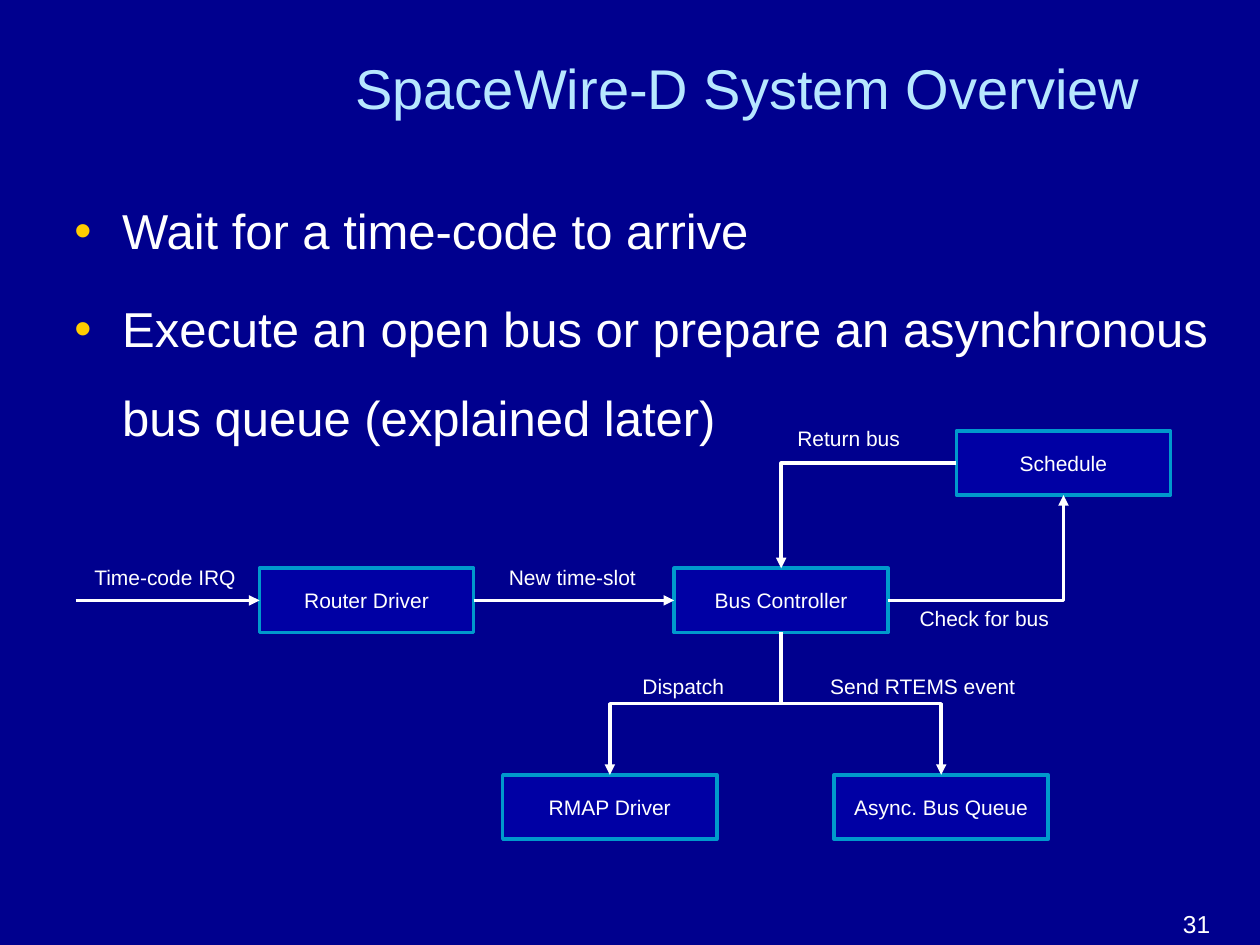
"""Build the SpaceWire-D system overview slide."""
from lxml import etree
from pptx import Presentation
from pptx.dml.color import RGBColor
from pptx.enum.shapes import MSO_CONNECTOR, MSO_SHAPE
from pptx.enum.text import MSO_ANCHOR, MSO_AUTO_SIZE, PP_ALIGN
from pptx.oxml.ns import qn
from pptx.util import Inches, Pt

STRAIGHT, ELBOW = MSO_CONNECTOR.STRAIGHT, MSO_CONNECTOR.ELBOW
RECTANGLE = MSO_SHAPE.RECTANGLE
TOP, MIDDLE, BOTTOM = MSO_ANCHOR.TOP, MSO_ANCHOR.MIDDLE, MSO_ANCHOR.BOTTOM
LEFT, CENTER = PP_ALIGN.LEFT, PP_ALIGN.CENTER
NO_FIT, GROW = MSO_AUTO_SIZE.NONE, MSO_AUTO_SIZE.SHAPE_TO_FIT_TEXT

THEME = {
    "font": "Arial",
    "background": "00008E", "title": "B7E7FF", "text": "FFFFFF",
    "bullet": "FFCC00", "box": "0000A4", "border": "0099CC", "arrow": "FFFFFF",
    "title_size": 32, "body_size": 28, "number_size": 14, "label_size": 12,
    "line_width": 2,
}

TITLE = "SpaceWire-D System Overview"
BULLETS = [
    "Wait for a time-code to arrive",
    "Execute an open bus or prepare an asynchronous bus queue (explained later)",
]
SLIDE_NUMBER = "31"

BOX_WIDTH, BOX_HEIGHT = 1.7, 0.51
BOXES = {
    "Router Driver": (2.06, 4.51),
    "Bus Controller": (5.35, 4.51),
    "RMAP Driver": (3.99, 6.15),
    "Async. Bus Queue": (6.62, 6.15),
    "Schedule": (7.59, 3.42),
}
LABEL_HEIGHT = 0.3
LABELS = [
    ("Time-code IRQ", 0.65, 4.43, 1.34),
    ("New time-slot", 3.94, 4.43, 1.22),
    ("Send RTEMS event", 6.49, 5.3, 1.68),
    ("Dispatch", 5, 5.3, 0.85),
    ("Check for bus", 7.2, 4.76, 1.24),
    ("Return bus", 6.23, 3.33, 1.02),
]
SITE_TOP, SITE_LEFT, SITE_BOTTOM, SITE_RIGHT = range(4)
INPUT_START = 0.6
ARROWS = [
    ("straight", "Router Driver", SITE_RIGHT, "Bus Controller", SITE_LEFT),
    ("fork", "Bus Controller", SITE_BOTTOM, "RMAP Driver", SITE_TOP),
    ("fork", "Bus Controller", SITE_BOTTOM, "Async. Bus Queue", SITE_TOP),
    ("corner", "Bus Controller", SITE_RIGHT, "Schedule", SITE_BOTTOM),
    ("corner", "Schedule", SITE_LEFT, "Bus Controller", SITE_TOP),
]


def color(name):
    return RGBColor.from_string(THEME[name])


def place(shape, left, top, width, height):
    shape.left, shape.top = Inches(left), Inches(top)
    shape.width, shape.height = Inches(width), Inches(height)


def add_bullet(paragraph):
    properties = paragraph._p.get_or_add_pPr()
    indent = Inches(0.38)
    properties.set("marL", str(indent))
    properties.set("indent", str(-indent))
    bullet_color = etree.SubElement(properties, qn("a:buClr"))
    etree.SubElement(bullet_color, qn("a:srgbClr")).set("val", THEME["bullet"])
    etree.SubElement(properties, qn("a:buChar")).set("char", "•")


def write_text(shape, lines, size="label_size", fill="text", align=LEFT, anchor=TOP,
               wrap=True, fit=NO_FIT, side_margin=0.1, bulleted=False):
    frame = shape.text_frame
    frame.text = "\n".join(lines)
    frame.word_wrap, frame.auto_size, frame.vertical_anchor = wrap, fit, anchor
    frame.margin_left = frame.margin_right = Inches(side_margin)
    for index, paragraph in enumerate(frame.paragraphs):
        if bulleted:
            add_bullet(paragraph)
            paragraph.line_spacing = 1.5
        paragraph.space_before = Pt(0.2 * THEME[size] if index else 0)
        paragraph.alignment = align
        paragraph.font.name = THEME["font"]
        paragraph.font.size = Pt(THEME[size])
        paragraph.font.color.rgb = color(fill)


def add_box(slide, text, left, top):
    box = slide.shapes.add_shape(RECTANGLE, Inches(left), Inches(top),
                                 Inches(BOX_WIDTH), Inches(BOX_HEIGHT))
    box.shadow.inherit = False
    box.fill.solid()
    box.fill.fore_color.rgb = color("box")
    box.line.color.rgb = color("border")
    box.line.width = Pt(THEME["line_width"])
    write_text(box, [text], align=CENTER, anchor=MIDDLE, side_margin=0)
    return box


def add_text_box(slide, text, left, top, width, height, **text_format):
    text_box = slide.shapes.add_textbox(0, 0, 0, 0)
    write_text(text_box, [text], **text_format)
    place(text_box, left, top, width, height)


def site_point(name, site):
    left, top = BOXES[name]
    across, down = [(0.5, 0), (0, 0.5), (0.5, 1), (1, 0.5)][site]
    return left + across * BOX_WIDTH, top + down * BOX_HEIGHT


def add_arrow(slide, kind, start, end):
    arrow = slide.shapes.add_connector(STRAIGHT if kind == "straight" else ELBOW,
                                       *map(Inches, start + end))
    arrow.line.color.rgb = color("arrow")
    arrow.line.width = Pt(THEME["line_width"])
    properties = arrow._element.spPr
    line = properties.find(qn("a:ln"))
    etree.SubElement(line, qn("a:tailEnd")).set("type", "triangle")
    etree.SubElement(properties, qn("a:effectLst"))
    return arrow


def turn_down(arrow, start, end):
    across, down = abs(end[0] - start[0]), abs(end[1] - start[1])
    center_x, center_y = (start[0] + end[0]) / 2, (start[1] + end[1]) / 2
    place(arrow, center_x - down / 2, center_y - across / 2, down, across)
    goes_right = end[0] > start[0]
    transform = arrow._element.spPr.find(qn("a:xfrm"))
    transform.set("rot", str((270 if goes_right else 90) * 60000))
    transform.set("flipH", "1" if goes_right else "0")


def link_boxes(slide, boxes, kind, source, source_site, target, target_site):
    start, end = site_point(source, source_site), site_point(target, target_site)
    arrow = add_arrow(slide, kind, start, end)
    arrow.begin_connect(boxes[source], source_site)
    arrow.end_connect(boxes[target], target_site)
    if kind == "corner":
        arrow._element.spPr.find(qn("a:prstGeom")).set("prst", "bentConnector2")
    elif kind == "fork":
        turn_down(arrow, start, end)


def main():
    presentation = Presentation()
    presentation.slide_width, presentation.slide_height = Inches(10), Inches(7.5)
    slide = presentation.slides.add_slide(presentation.slide_layouts[1])
    slide.background.fill.solid()
    slide.background.fill.fore_color.rgb = color("background")

    title, body = slide.placeholders
    place(title, 2.72, 0.29, 7.28, 0.8)
    write_text(title, [TITLE], size="title_size", fill="title", anchor=MIDDLE)
    place(body, 0.49, 1.31, 9.51, 5.72)
    write_text(body, BULLETS, size="body_size", bulleted=True)
    add_text_box(slide, SLIDE_NUMBER, 9.29, 7.03, 0.71, 0.47,
                 size="number_size", anchor=BOTTOM)

    boxes = {name: add_box(slide, name, *corner) for name, corner in BOXES.items()}
    entry = site_point("Router Driver", SITE_LEFT)
    input_arrow = add_arrow(slide, "straight", (INPUT_START, entry[1]), entry)
    input_arrow.end_connect(boxes["Router Driver"], SITE_LEFT)
    for arrow in ARROWS:
        link_boxes(slide, boxes, *arrow)
    for text, left, top, width in LABELS:
        add_text_box(slide, text, left, top, width, LABEL_HEIGHT, wrap=False, fit=GROW)

    presentation.save("out.pptx")


if __name__ == "__main__":
    main()
